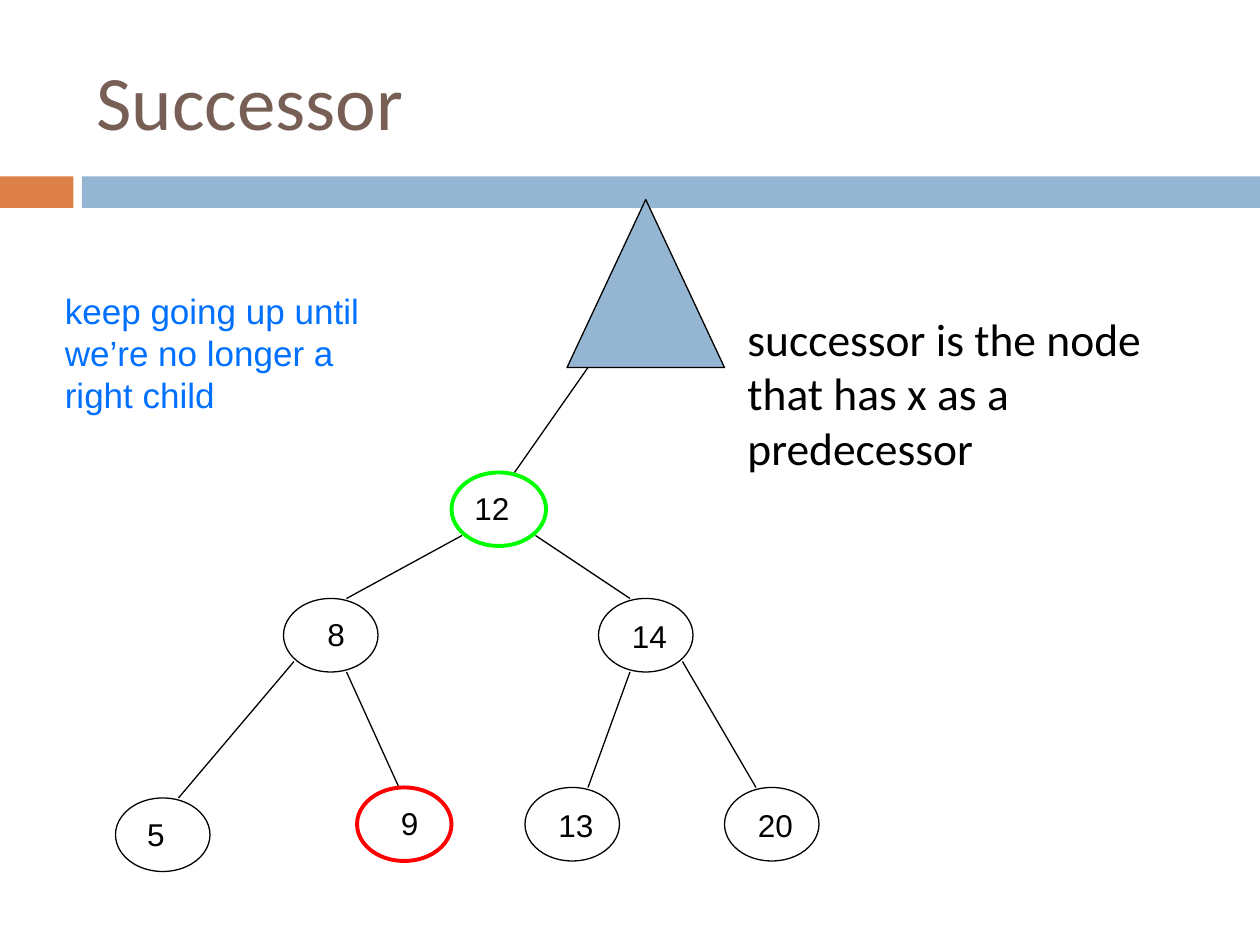
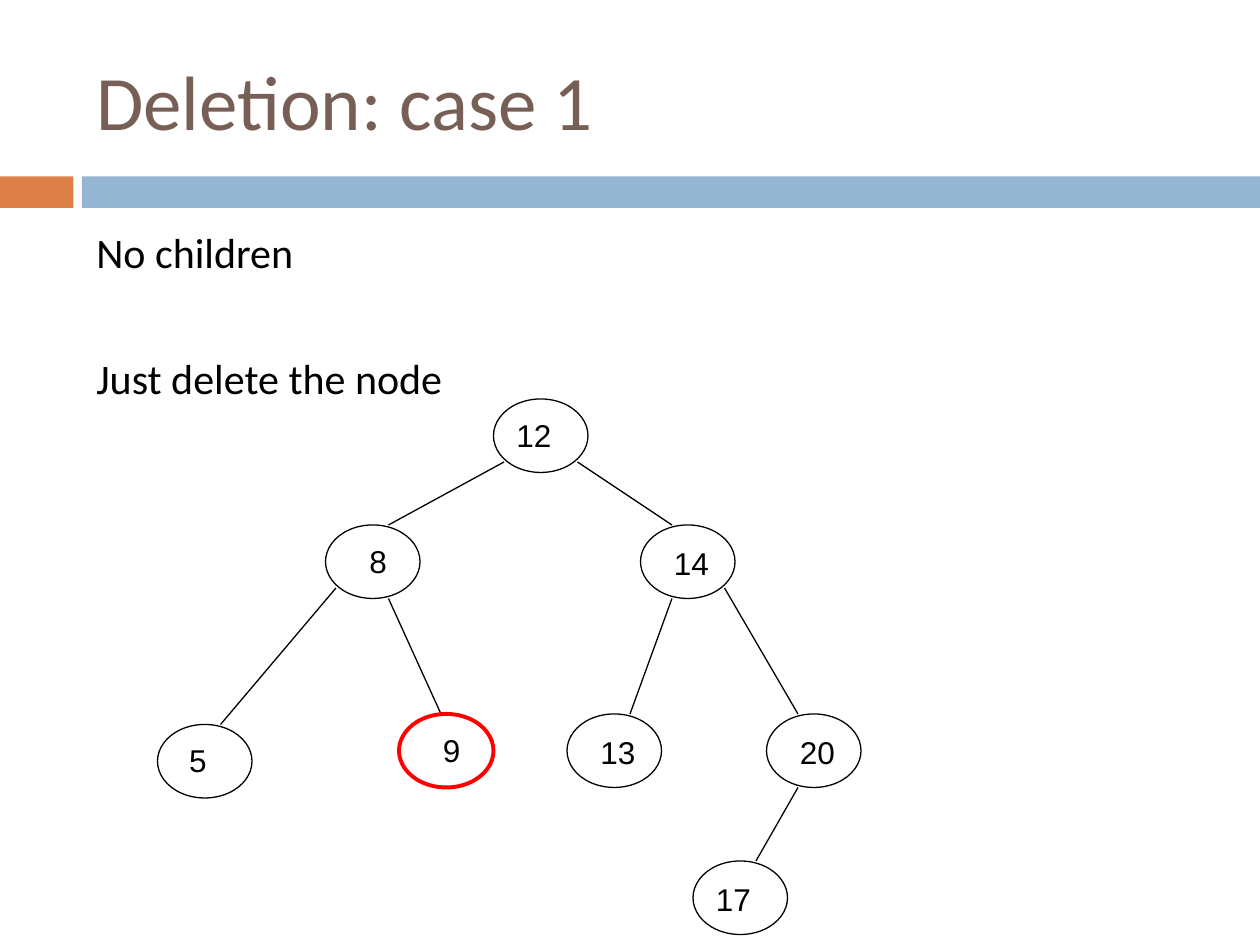
from pptx import Presentation
from pptx.dml.color import RGBColor
from pptx.enum.shapes import MSO_CONNECTOR, MSO_SHAPE
from pptx.enum.text import MSO_ANCHOR
from pptx.oxml.ns import qn
from pptx.util import Pt
from lxml import etree

BLACK, RED, GREEN = "000000", "FF0000", "00FF00"
BROWN, ORANGE, BLUE, NOTE_BLUE = "775F55", "DD8047", "94B6D2", "0070FF"
HEADING_FONT, LABEL_FONT = "Calibri", "Arial"
NODE_W, NODE_H = 54, 42

# key: node left, node top, label offset x, label offset y
NODES = {
    12: (258, 270, 6, 6),
    8: (162, 342, 18, 6),
    14: (342, 342, 12, 7.2),
    5: (66, 456, 11, 6),
    9: (204, 450, 18, 6),
    13: (300, 450, 12, 7.2),
    20: (414, 450, 12, 7.2),
    17: (372, 534, 6, 7.2),
}
# parent, child, offset inside parent, offset along the child's top
EDGES = [
    (12, 8, (6, 36), 36),
    (12, 14, (48, 36), 18),
    (8, 5, (6, 36), 36),
    (8, 9, (36, NODE_H), 24),
    (14, 13, (18, NODE_H), 36),
    (14, 20, (48, 36), 18),
    (20, 17, (18, NODE_H), 36),
]


def rgb(color):
    return RGBColor.from_string(color)


class Deck:
    def __init__(self):
        self.prs = Presentation()
        self.prs.slide_width, self.prs.slide_height = Pt(720), Pt(540)

    def slide(self, title):
        self.s = self.prs.slides.add_slide(self.prs.slide_layouts[6])
        self.shape(MSO_SHAPE.RECTANGLE, 0, 100.8, 42, 18, fill=ORANGE)
        self.shape(MSO_SHAPE.RECTANGLE, 46.8, 100.8, 673.2, 18, fill=BLUE)
        tf = self.text([title], 48, 18, 642, 78, 44, HEADING_FONT, BROWN)
        tf.vertical_anchor = MSO_ANCHOR.MIDDLE

    def shape(self, kind, x, y, w, h, fill=None, line=None, width=0.75):
        sp = self.s.shapes.add_shape(kind, Pt(x), Pt(y), Pt(w), Pt(h))
        sp.shadow.inherit = False
        if fill:
            sp.fill.solid()
            sp.fill.fore_color.rgb = rgb(fill)
        else:
            sp.fill.background()
        if line:
            sp.line.color.rgb = rgb(line)
            sp.line.width = Pt(width)
        else:
            sp.line.fill.background()

    def text(self, lines, x, y, w, h, size, font, color=BLACK, gap=0):
        tf = self.s.shapes.add_textbox(Pt(x), Pt(y), Pt(w), Pt(h)).text_frame
        tf.word_wrap = True
        tf.text = "\n".join(lines)
        for p in tf.paragraphs[1:]:
            p.space_before = Pt(gap)
        for p in tf.paragraphs:
            for r in p.runs:
                r.font.size = Pt(size)
                r.font.name = font
                r.font.color.rgb = rgb(color)
        return tf

    def line(self, x1, y1, x2, y2):
        c = self.s.shapes.add_connector(
            MSO_CONNECTOR.STRAIGHT, Pt(x1), Pt(y1), Pt(x2), Pt(y2))
        c.line.color.rgb = rgb(BLACK)
        c.line.width = Pt(0.75)
        etree.SubElement(c._element.spPr, qn("a:effectLst"))

    def tree(self, keys, marks, dx=0, dy=0):
        for parent, child, (px, py), cx in EDGES:
            if parent in keys and child in keys:
                x1, y1 = NODES[parent][:2]
                x2, y2 = NODES[child][:2]
                self.line(x1 + px + dx, y1 + py + dy, x2 + cx + dx, y2 + dy)
        for key in keys:
            x, y, tx, ty = NODES[key]
            x, y = x + dx, y + dy
            self.text([str(key)], x + tx, y + ty, 48, 28.8, 18, LABEL_FONT)
            self.shape(MSO_SHAPE.OVAL, x, y, NODE_W, NODE_H,
                       line=marks.get(key, BLACK),
                       width=2.25 if key in marks else 0.75)


def main():
    deck = Deck()

    deck.slide("Successor")
    deck.tree([12, 8, 14, 5, 9, 13, 20], {12: GREEN, 9: RED})
    deck.shape(MSO_SHAPE.ISOSCELES_TRIANGLE, 324, 114, 90, 96, BLUE, BLACK)
    deck.line(336, 210, 294, 270)
    deck.text(["successor is the node that has x as a predecessor"],
              420, 174, 264, 102, 26, HEADING_FONT)
    deck.text(["keep going up until we’re no longer a right child"],
              30, 162, 210, 79.2, 20, LABEL_FONT, NOTE_BLUE)

    deck.slide("Deletion: case 1")
    deck.text(["No children", "Just delete the node"],
              48, 126, 642, 354, 24, HEADING_FONT, gap=43)
    deck.tree(list(NODES), {9: RED}, dx=24, dy=-42)

    deck.prs.save("out.pptx")


if __name__ == "__main__":
    main()
